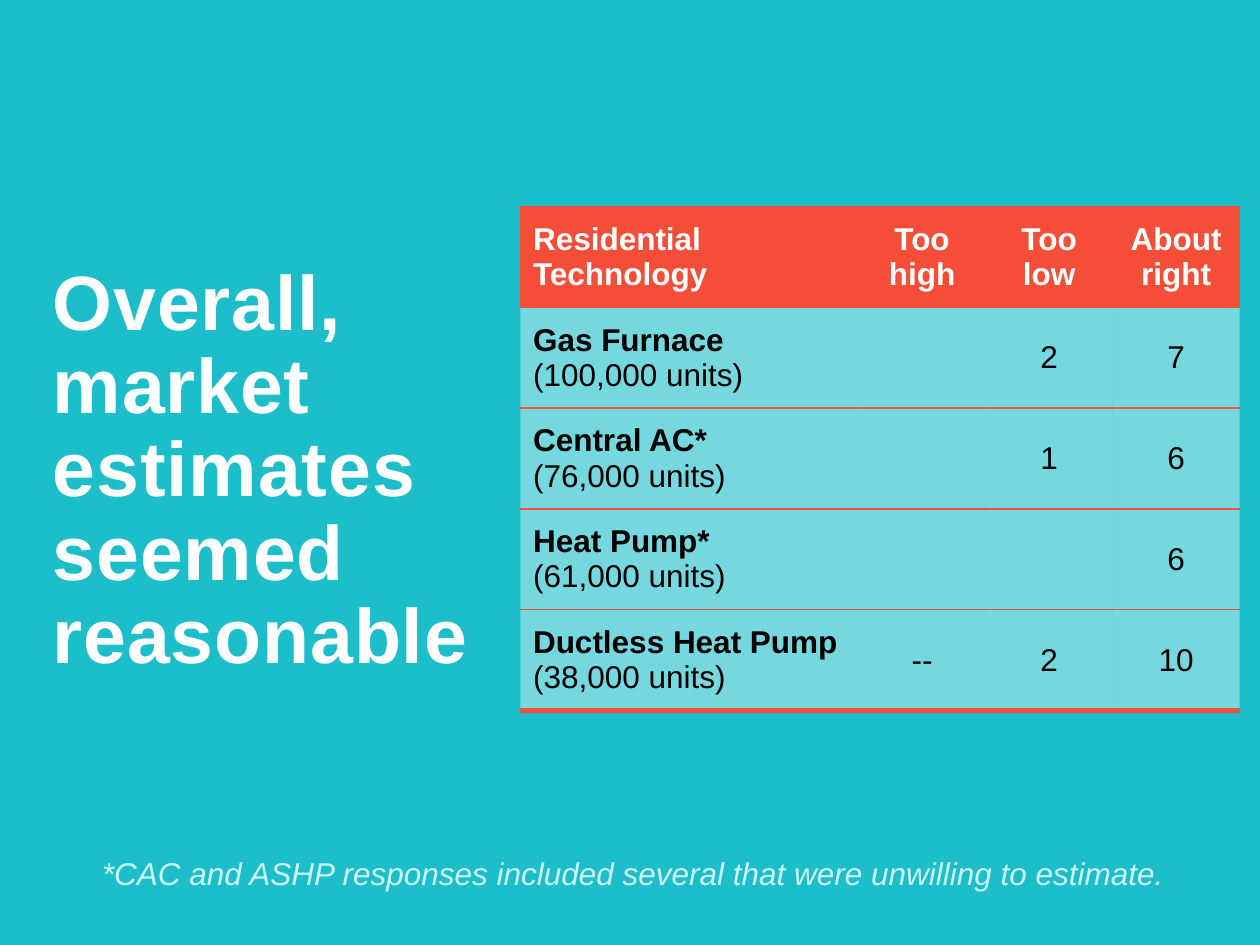
from lxml import etree
from pptx import Presentation
from pptx.dml.color import RGBColor
from pptx.enum.text import MSO_ANCHOR, MSO_AUTO_SIZE, PP_ALIGN
from pptx.oxml.ns import qn
from pptx.util import Pt

LEFT, CENTER = PP_ALIGN.LEFT, PP_ALIGN.CENTER
MIDDLE = MSO_ANCHOR.MIDDLE
NO_AUTOFIT, GROW = MSO_AUTO_SIZE.NONE, MSO_AUTO_SIZE.SHAPE_TO_FIT_TEXT

TEAL, RED, WHITE, BLACK, PALE = "1CBECA", "F44E39", "FFFFFF", "000000", "CEF5F8"
FONT = "Arial"
PLAIN_TABLE_STYLE = "{2D5ABB26-0587-4C30-8999-92F81FD0307C}"

TITLE = "Overall, market estimates seemed reasonable"
FOOTNOTE = "*CAC and ASHP responses included several that were unwilling to estimate."
HEADER = ["Residential Technology", "Too high", "Too low", "About right"]
ESTIMATES = [
    ("Gas Furnace", "(100,000 units)", ["", "2", "7"]),
    ("Central AC*", "(76,000 units)", ["", "1", "6"]),
    ("Heat Pump*", "(61,000 units)", ["", "", "6"]),
    ("Ductless Heat Pump", "(38,000 units)", ["--", "2", "10"]),
]
COLUMN_WIDTHS = [193.2, 72.6, 72.6, 72.6]
ROW_HEIGHT = 57.6
TABLE_LEFT, TABLE_TOP = 297.4, 118


def rgb(value):
    return RGBColor.from_string(value)


def add_run(paragraph, text, color, size=18, bold=False, italic=False):
    run = paragraph.add_run()
    run.text = text
    font = run.font
    font.name, font.size, font.bold, font.italic = FONT, Pt(size), bold, italic
    font.color.rgb = rgb(color)
    return run


def place(shape, left, top, width, height):
    shape.left, shape.top = Pt(left), Pt(top)
    shape.width, shape.height = Pt(width), Pt(height)


def fill_cell(cell, color, opacity=100):
    cell.fill.solid()
    cell.fill.fore_color.rgb = rgb(color)
    if opacity < 100:
        color_element = cell._tc.tcPr.find(f".//{qn('a:srgbClr')}")
        etree.SubElement(color_element, qn("a:alpha"), val=str(opacity * 1000))


def set_borders(cell, top, bottom):
    for index, (tag, width) in enumerate([("a:lnT", top), ("a:lnB", bottom)]):
        line = etree.Element(qn(tag), w=str(Pt(width)))
        solid = etree.SubElement(line, qn("a:solidFill"))
        etree.SubElement(solid, qn("a:srgbClr"), val=RED)
        cell._tc.tcPr.insert(index, line)


def write_cell(cell, lines, color, alignment):
    """Write (text, bold) pairs into a cell, one paragraph each."""
    cell.vertical_anchor = MIDDLE
    frame = cell.text_frame
    for index, (text, bold) in enumerate(lines):
        paragraph = frame.add_paragraph() if index else frame.paragraphs[0]
        paragraph.alignment = alignment
        if text:
            add_run(paragraph, text, color, bold=bold)
        else:
            paragraph.font.size = Pt(18)


def add_title(slide):
    title = slide.shapes.title
    place(title, 23, 113.8, 254.9, 311.8)
    frame = title.text_frame
    frame.word_wrap, frame.auto_size = True, NO_AUTOFIT
    frame.vertical_anchor = MIDDLE
    paragraph = frame.paragraphs[0]
    paragraph.alignment, paragraph.line_spacing = LEFT, 0.9
    run = add_run(paragraph, TITLE, WHITE, size=44, bold=True)
    run.font._element.set("spc", "50")


def add_estimates(slide):
    row_count = len(ESTIMATES) + 1
    table = slide.shapes.add_table(
        row_count, len(HEADER), Pt(TABLE_LEFT), Pt(TABLE_TOP),
        Pt(sum(COLUMN_WIDTHS)), Pt(ROW_HEIGHT * row_count)).table
    table._tbl.tblPr.find(qn("a:tableStyleId")).text = PLAIN_TABLE_STYLE
    table.horz_banding = False
    for column, width in zip(table.columns, COLUMN_WIDTHS):
        column.width = Pt(width)
    for row in table.rows:
        row.height = Pt(ROW_HEIGHT)

    rows = [[[(text, True)] for text in HEADER]]
    for name, units, counts in ESTIMATES:
        rows.append([[(name, True), (units, False)]] + [[(count, False)] for count in counts])

    for row_index, row in enumerate(rows):
        is_header = row_index == 0
        bottom = 3 if row_index == row_count - 1 else 1
        for column_index, lines in enumerate(row):
            cell = table.cell(row_index, column_index)
            write_cell(cell, lines, WHITE if is_header else BLACK,
                       CENTER if column_index else LEFT)
            fill_cell(cell, RED if is_header else WHITE, 100 if is_header else 40)
            set_borders(cell, 1, bottom)


def add_footnote(slide):
    box = slide.shapes.add_textbox(Pt(51.1), Pt(484.6), Pt(640.1), Pt(28.8))
    frame = box.text_frame
    frame.word_wrap, frame.auto_size = True, GROW
    add_run(frame.paragraphs[0], FOOTNOTE, PALE, italic=True)


def main():
    presentation = Presentation()
    presentation.slide_width, presentation.slide_height = Pt(720), Pt(540)
    slide = presentation.slides.add_slide(presentation.slide_layouts[5])
    slide.background.fill.solid()
    slide.background.fill.fore_color.rgb = rgb(TEAL)
    add_title(slide)
    add_estimates(slide)
    add_footnote(slide)
    presentation.save("out.pptx")


if __name__ == "__main__":
    main()
